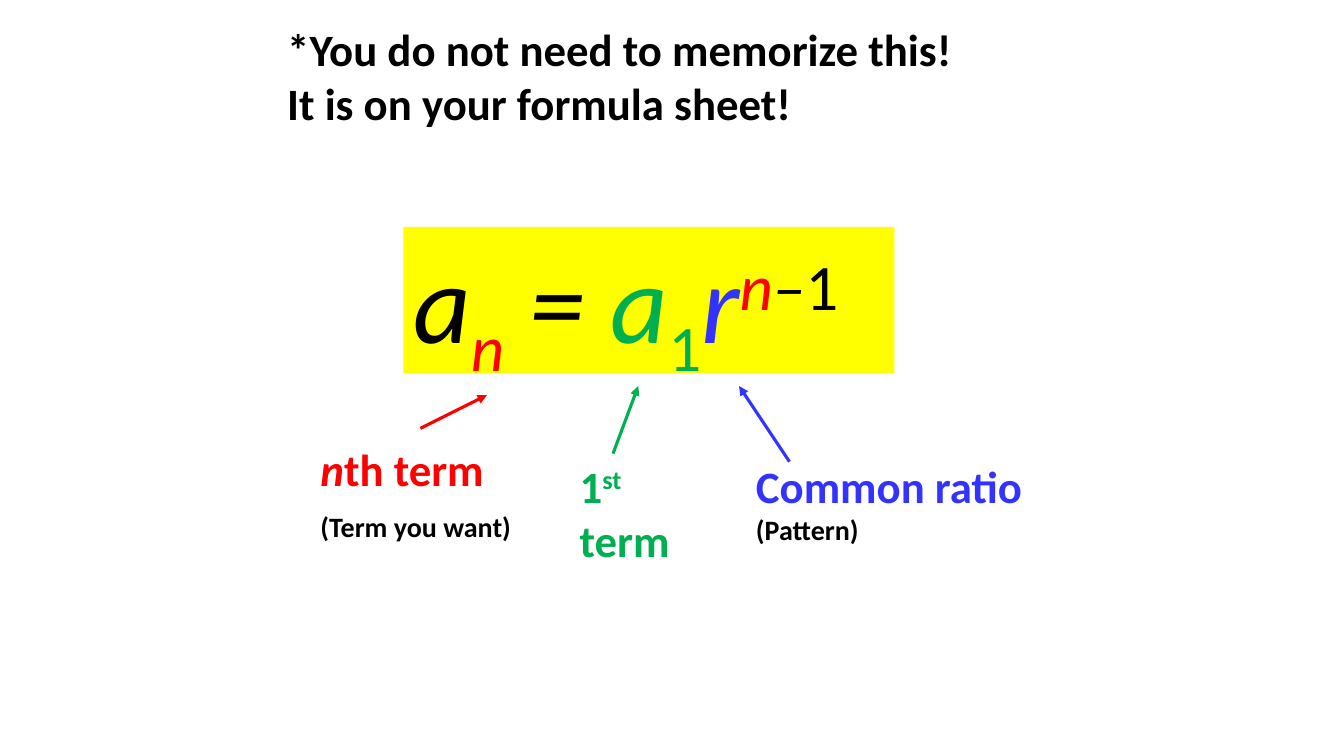
from pptx import Presentation
from pptx.dml.color import RGBColor
from pptx.enum.shapes import MSO_CONNECTOR
from pptx.enum.text import MSO_ANCHOR
from pptx.oxml.ns import qn
from pptx.util import Inches, Pt
from lxml.etree import SubElement

FONT = "Calibri"
COLORS = {
    "black": "000000",
    "red": "FF0000",
    "green": "00B050",
    "blue": "3333FF",
    "yellow": "FFFF00",
}
SUB, SUP = -25, 30

# Each run: text, color, italic, baseline shift in percent
FORMULA = [
    ("a", "black", True, 0),
    ("n", "red", True, SUB),
    (" = ", "black", True, 0),
    ("a", "green", True, 0),
    ("1", "green", False, SUB),
    ("r", "blue", True, 0),
    ("n", "red", True, SUP),
    ("–", "black", True, SUP),
    ("1", "black", False, SUP),
]
NOTE = [
    [("*You do not need to memorize this!", "black", False, 0)],
    [("It is on your formula sheet!", "black", False, 0)],
]
TERM = [
    [("n", "red", True, 0), ("th term", "red", False, 0)],
    [("(Term you want)", "black", False, 0)],
]
FIRST = [
    [("1", "green", False, 0), ("st", "green", False, SUP),
     (" term", "green", False, 0)],
]
RATIO = [
    [("Common ratio", "blue", False, 0)],
    [("(Pattern)", "black", False, 0)],
]

# Box (left, top, width, height), paragraphs, sizes, bold, gap, fill
BOXES = [
    ((4, 2.25, 4.87, 1.45), [FORMULA], [80], False, 0, "yellow"),
    ((3.08, 4.33, 2.23, 1.14), TERM, [32, 20], True, 10, None),
    ((5.65, 4.5, 1.35, 1.18), FIRST, [32], True, 0, None),
    ((7.4, 4.5, 2.97, 0.98), RATIO, [32, 20], True, 0, None),
    ((2.75, 0.17, 10.58, 1.18), NOTE, [32, 32], True, 0, None),
]
# Start, end, color
ARROWS = [
    ((4.17, 4.25), (4.83, 3.92), "red"),
    ((7.83, 4.58), (7.33, 3.83), "blue"),
    ((6.08, 4.5), (6.33, 3.83), "green"),
]


def color(name):
    return RGBColor.from_string(COLORS[name])


def add_run(para, run_data, size, bold):
    text, hue, italic, shift = run_data
    run = para.add_run()
    run.text = text
    font = run.font
    font.name, font.size = FONT, Pt(size)
    font.bold, font.italic = bold, italic
    font.color.rgb = color(hue)
    if shift:
        run._r.get_or_add_rPr().set("baseline", str(shift * 1000))


def add_box(slide, area, paras, sizes, bold, gap, fill):
    box = slide.shapes.add_textbox(*map(Inches, area))
    if fill:
        box.fill.solid()
        box.fill.fore_color.rgb = color(fill)
    frame = box.text_frame
    frame.word_wrap = True
    frame.vertical_anchor = MSO_ANCHOR.TOP
    for i, (runs, size) in enumerate(zip(paras, sizes)):
        para = frame.add_paragraph() if i else frame.paragraphs[0]
        para.space_before = Pt(gap if i else 0)
        for run_data in runs:
            add_run(para, run_data, size, bold)


def add_arrow(slide, start, end, hue):
    arrow = slide.shapes.add_connector(
        MSO_CONNECTOR.STRAIGHT, *map(Inches, start + end))
    arrow.line.color.rgb = color(hue)
    arrow.line.width = Pt(2.25)
    SubElement(arrow.line._get_or_add_ln(), qn("a:tailEnd"), type="triangle")
    SubElement(arrow._element.spPr, qn("a:effectLst"))


def main():
    deck = Presentation()
    deck.slide_width, deck.slide_height = Inches(13.33), Inches(7.5)
    slide = deck.slides.add_slide(deck.slide_layouts[6])
    for box in BOXES:
        add_box(slide, *box)
    for arrow in ARROWS:
        add_arrow(slide, *arrow)
    deck.save("out.pptx")


if __name__ == "__main__":
    main()
